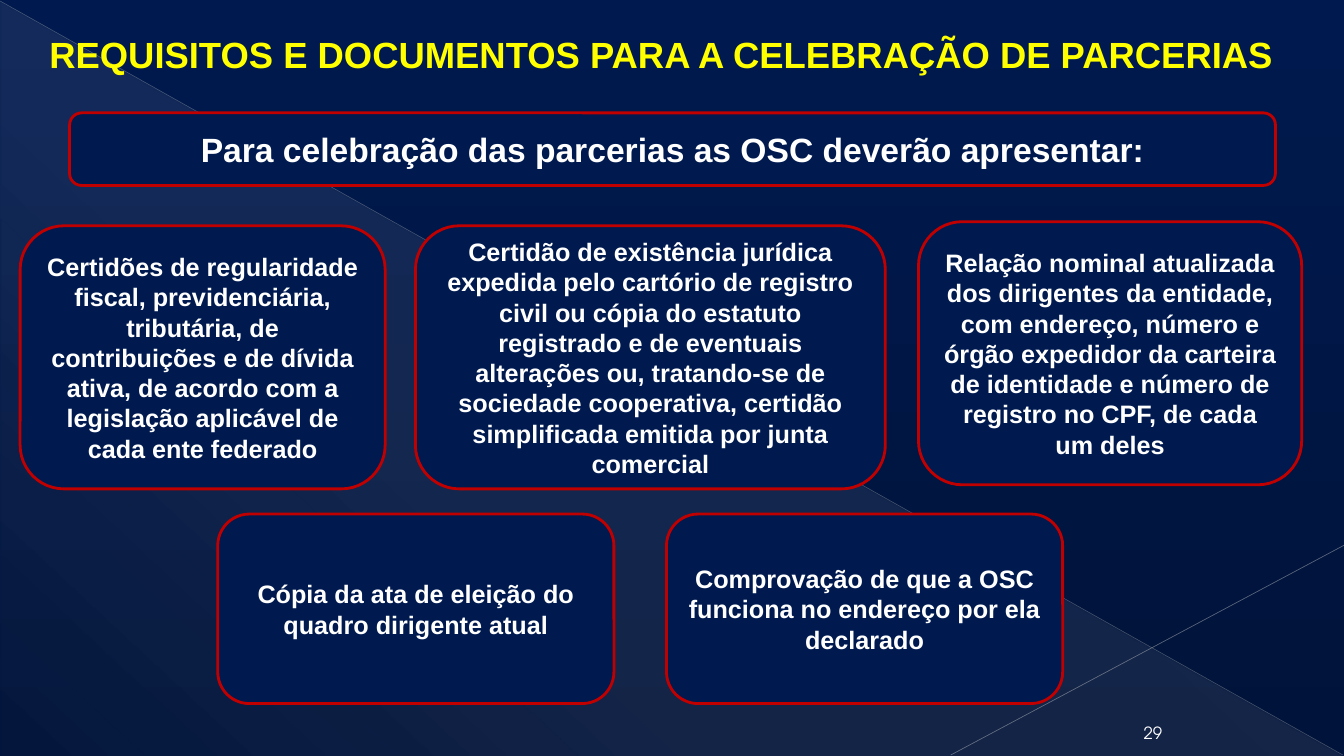
import copy
from dataclasses import dataclass

import lxml.etree
import pptx
import pptx.dml.color
import pptx.enum.dml
import pptx.enum.shapes
import pptx.enum.text
import pptx.oxml.ns
import pptx.util

SLIDE_WIDTH = pptx.util.Inches(13.33)
SLIDE_HEIGHT = pptx.util.Inches(7.5)
TITLE_ONLY_LAYOUT = 5

COLOURS = {
    "navy": "001A4F",
    "deep_navy": "00133A",
    "red": "C00000",
    "yellow": "FFFF00",
    "white": "FFFFFF",
    "veil": "D2D2D2",
    "diagonal": "BFBFBF",
    "corner": "C6C6C6",
}

CENTER = pptx.enum.text.PP_ALIGN.CENTER
ANCHOR = pptx.enum.text.MSO_ANCHOR


@dataclass(frozen=True)
class Area:
    """A rectangle in percent of the slide's width and height."""
    left: float
    top: float
    width: float
    height: float

    def lengths(self) -> dict[str, int]:
        return {
            "left": across(self.left),
            "top": down(self.top),
            "width": across(self.width),
            "height": down(self.height),
        }


@dataclass(frozen=True)
class Box:
    area: Area
    text: str
    size: int = 18
    space_after: int = 12


@dataclass(frozen=True)
class Ray:
    """A thin translucent line, its ends in percent of the slide."""
    start: tuple[float, float]
    end: tuple[float, float]
    colour: str
    width: float
    opacity: int


UPPER_TOP, UPPER_HEIGHT = 29.87, 34.8
LOWER_TOP, LOWER_WIDTH, LOWER_HEIGHT = 68, 29.48, 25.07

BOXES = [
    Box(Area(5.18, 14.93, 89.72, 9.6),
        "Para celebração das parcerias as OSC deverão apresentar:", 24, 0),
    Box(Area(1.5, UPPER_TOP, 27.16, UPPER_HEIGHT),
        "Certidões de regularidade fiscal, previdenciária, tributária, de "
        "contribuições e de dívida ativa, de acordo com a legislação "
        "aplicável de cada ente federado"),
    Box(Area(30.91, UPPER_TOP, 34.96, UPPER_HEIGHT),
        "Certidão de existência jurídica expedida pelo cartório de registro "
        "civil ou cópia do estatuto registrado e de eventuais alterações ou, "
        "tratando-se de sociedade cooperativa, certidão simplificada emitida "
        "por junta comercial"),
    Box(Area(68.34, 29.33, 28.51, UPPER_HEIGHT),
        "Relação nominal atualizada dos dirigentes da entidade, com endereço, "
        "número e órgão expedidor da carteira de identidade e número de "
        "registro no CPF, de cada um deles"),
    Box(Area(16.2, LOWER_TOP, LOWER_WIDTH, LOWER_HEIGHT),
        "Cópia da ata de eleição do quadro dirigente atual"),
    Box(Area(49.59, LOWER_TOP, LOWER_WIDTH, LOWER_HEIGHT),
        "Comprovação de que a OSC funciona no endereço por ela declarado"),
]

RAYS = [
    Ray((0, 0.13), (99.92, 99.87), "diagonal", 0.39, 35),
    Ray((100, 72.13), (70.74, 99.87), "corner", 0.47, 45),
]

VEIL_STOPS = [(0, 10), (70, 8), (100, 1)]  # position and opacity, percent


def across(percent: float) -> int:
    return round(SLIDE_WIDTH * percent / 100)


def down(percent: float) -> int:
    return round(SLIDE_HEIGHT * percent / 100)


def rgb(name: str) -> pptx.dml.color.RGBColor:
    return pptx.dml.color.RGBColor.from_string(COLOURS[name])


def apply(target, formats: dict) -> None:
    for name, value in formats.items():
        setattr(target, name, value)


def add_opacity(colour_element, percent: int) -> None:
    alpha = lxml.etree.SubElement(colour_element, pptx.oxml.ns.qn("a:alpha"))
    alpha.set("val", str(percent * 1000))


def write_text(shape, text: str, size: int, anchor, colour: str = "white",
               font: str = "Arial", bold: bool = True,
               space_after: int = 0) -> None:
    frame = shape.text_frame
    apply(frame, {"word_wrap": True, "vertical_anchor": anchor,
                  "auto_size": pptx.enum.text.MSO_AUTO_SIZE.NONE})
    paragraph = frame.paragraphs[0]
    apply(paragraph, {"alignment": CENTER,
                      "space_after": pptx.util.Pt(space_after)})
    run = paragraph.add_run()
    run.text = text
    apply(run.font, {"name": font, "size": pptx.util.Pt(size), "bold": bold})
    run.font.color.rgb = rgb(colour)


def paint_background(slide) -> None:
    fill = slide.background.fill
    fill.gradient()
    fill.gradient_angle = 270
    for stop, colour, position in zip(
            fill.gradient_stops, ("navy", "deep_navy"), (0, 1)):
        stop.color.rgb = rgb(colour)
        stop.position = position


def add_veil(slide) -> None:
    """Add the translucent triangle below the slide's diagonal."""
    veil = slide.shapes.add_shape(
        pptx.enum.shapes.MSO_SHAPE.RIGHT_TRIANGLE,
        **Area(0.08, 0.27, 99.85, 99.73).lengths())
    veil.shadow.inherit = False
    veil.line.fill.background()
    veil.fill.gradient()
    veil.fill.gradient_angle = 227
    for stop in veil.fill.gradient_stops:
        stop.color.rgb = rgb("veil")
    stop_list = veil.element.find(".//" + pptx.oxml.ns.qn("a:gsLst"))
    stop_list.append(copy.deepcopy(stop_list[-1]))
    for stop, (position, opacity) in zip(stop_list, VEIL_STOPS):
        stop.set("pos", str(position * 1000))
        add_opacity(stop[0], opacity)


def add_ray(slide, ray: Ray) -> None:
    connector = slide.shapes.add_connector(
        pptx.enum.shapes.MSO_CONNECTOR.STRAIGHT,
        across(ray.start[0]), down(ray.start[1]),
        across(ray.end[0]), down(ray.end[1]))
    connector.line.color.rgb = rgb(ray.colour)
    connector.line.width = pptx.util.Pt(ray.width)
    properties = connector.element.spPr
    add_opacity(properties.find(".//" + pptx.oxml.ns.qn("a:srgbClr")),
                ray.opacity)
    lxml.etree.SubElement(properties, pptx.oxml.ns.qn("a:effectLst"))


def add_box(slide, box: Box) -> None:
    shape = slide.shapes.add_shape(
        pptx.enum.shapes.MSO_SHAPE.ROUNDED_RECTANGLE, **box.area.lengths())
    shape.shadow.inherit = False
    shape.fill.solid()
    shape.fill.fore_color.rgb = rgb("navy")
    shape.line.color.rgb = rgb("red")
    shape.line.width = pptx.util.Pt(2)
    write_text(shape, box.text, box.size, ANCHOR.MIDDLE,
               space_after=box.space_after)


def place_title(slide) -> None:
    title = slide.shapes.title
    apply(title, Area(1.5, 3.6, 96.25, 28.53).lengths())
    write_text(title,
               "REQUISITOS E DOCUMENTOS PARA A CELEBRAÇÃO DE PARCERIAS ",
               26, ANCHOR.TOP, "yellow")
    title.element.getparent().append(title.element)  # in front of the veil


def add_page_number(slide) -> None:
    number = slide.shapes.add_textbox(
        **Area(83.05, 94.53, 5.48, 4.4).lengths())
    write_text(number, "29", 12, ANCHOR.BOTTOM,
               font="TeX Gyre Adventor", bold=False)


def main() -> None:
    presentation = pptx.Presentation()
    apply(presentation, {"slide_width": SLIDE_WIDTH,
                         "slide_height": SLIDE_HEIGHT})
    slide = presentation.slides.add_slide(
        presentation.slide_layouts[TITLE_ONLY_LAYOUT])
    paint_background(slide)
    add_veil(slide)
    for ray in RAYS:
        add_ray(slide, ray)
    place_title(slide)
    add_page_number(slide)
    for box in BOXES:
        add_box(slide, box)
    presentation.save("out.pptx")


if __name__ == "__main__":
    main()
